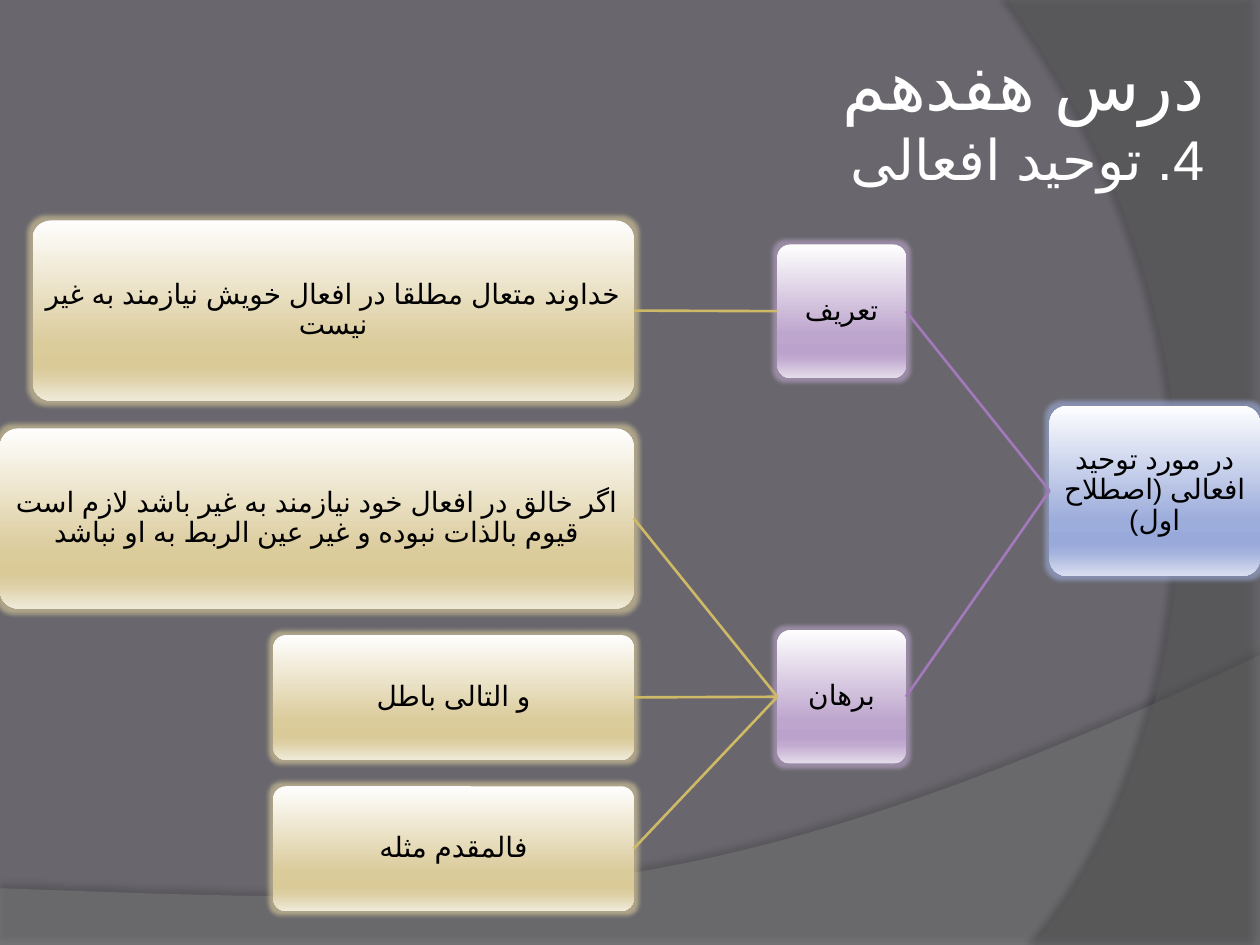
from lxml import etree
from pptx import Presentation
from pptx.dml.color import RGBColor
from pptx.enum.lang import MSO_LANGUAGE_ID
from pptx.enum.shapes import MSO_CONNECTOR, MSO_SHAPE
from pptx.enum.text import MSO_ANCHOR, PP_ALIGN
from pptx.oxml.ns import qn
from pptx.util import Inches, Pt

ROUNDED = MSO_SHAPE.ROUNDED_RECTANGLE
STRAIGHT = MSO_CONNECTOR.STRAIGHT
MIDDLE = MSO_ANCHOR.MIDDLE
CENTER, RIGHT = PP_ALIGN.CENTER, PP_ALIGN.RIGHT
PERSIAN = MSO_LANGUAGE_ID.FARSI
LEFT_SIDE, RIGHT_SIDE = 1, 3
CURVE_STEPS = 40
SCRIPT_FONT = "Arial"

COLORS = {
    "background": "69676D",
    "title": "FFFFFF",
    "text": "000000",
    "shadow": "000000",
    "hill": "7F7F7F",
    "arc": "5E5E5E",
    "purple_line": "A379BB",
    "gold_line": "CEB966",
}
STOP_POSITIONS = (0, 68, 81, 86, 100)
GRADIENTS = {
    "blue": ("FEFEFF", "9CACDB", "98A9DA", "A3B1DD", "D9DEF0"),
    "purple": ("FEFEFE", "BDA5CD", "BBA2CC", "C2ABD0", "E4DCEA"),
    "gold": ("FFFEFE", "DBCC9C", "D9CA98", "DDCFA3", "EFEAD9"),
}
BOX_FRAME = {
    "word_wrap": True,
    "vertical_anchor": MIDDLE,
    "margin_left": Inches(0.05),
    "margin_right": Inches(0.05),
    "margin_top": Inches(0.05),
    "margin_bottom": Inches(0.05),
}

TOPIC = ("در مورد توحید افعالی (اصطلاح اول)", (8.33, 3.22, 1.67, 1.35))
BRANCHES = [
    ("تعریف", (6.17, 1.94, 1.02, 1.06), [
        ("خداوند متعال مطلقا در افعال خویش نیازمند به غیر نیست", (0.26, 1.75, 4.77, 1.43)),
    ]),
    ("برهان", (6.17, 5, 1.02, 1.06), [
        ("اگر خالق در افعال خود نیازمند به غیر باشد لازم است قیوم بالذات نبوده"
         " و غیر عین الربط به او نباشد", (0, 3.4, 5.03, 1.43)),
        ("و التالی باطل", (2.17, 5.04, 2.86, 0.99)),
        ("فالمقدم مثله", (2.17, 6.24, 2.86, 0.99)),
    ]),
]


def set_attributes(target, values):
    """Set every named value on the target."""
    for name, value in values.items():
        setattr(target, name, value)


def add_color(parent, color, opacity=100):
    """Append an RGB colour with an opacity in percent."""
    element = etree.SubElement(parent, qn("a:srgbClr"), val=color)
    if opacity < 100:
        etree.SubElement(element, qn("a:alpha"), val=str(opacity * 1000))


def add_effect(shape, tag, color, opacity, **attributes):
    """Give a shape a single effect in place of the theme shadow."""
    shape.shadow.inherit = False
    effects = shape._element.spPr.find(qn("a:effectLst"))
    values = {name: str(value) for name, value in attributes.items()}
    add_color(etree.SubElement(effects, qn(tag), values), color, opacity)


def fill_gradient(shape, colors):
    """Fill a shape with a gradient that runs from top to bottom."""
    shape.fill.gradient()
    shape.fill.gradient_angle = 270
    stops = next(shape._element.spPr.iter(qn("a:gsLst")))
    for stop in list(stops):
        stops.remove(stop)
    for position, color in zip(STOP_POSITIONS, colors):
        add_color(etree.SubElement(stops, qn("a:gs"), pos=str(position * 1000)), color)


def add_run(paragraph, text, size, font, color):
    """Add formatted Persian text to a paragraph."""
    run = paragraph.add_run()
    run.text = text
    set_attributes(run.font, {"size": Pt(size), "name": font, "language_id": PERSIAN})
    run.font.color.rgb = RGBColor.from_string(color)
    etree.SubElement(run._r.get_or_add_rPr(), qn("a:cs"), typeface=SCRIPT_FONT)


def format_paragraph(paragraph, **values):
    """Make a paragraph run from right to left and set its format."""
    set_attributes(paragraph, values)
    paragraph._p.get_or_add_pPr().set("rtl", "1")


def curve_points(start, first, second, end):
    """Return points along a cubic curve, without its start."""
    points = []
    for step in range(1, CURVE_STEPS + 1):
        t = step / CURVE_STEPS
        weights = ((1 - t) ** 3, 3 * t * (1 - t) ** 2, 3 * t ** 2 * (1 - t), t ** 3)
        points.append(tuple(
            sum(weight * value for weight, value in zip(weights, axis))
            for axis in zip(start, first, second, end)))
    return points


def add_backdrop(slide, points, color, opacity, shadow):
    """Draw a translucent background outline with a soft shadow."""
    corners = [(Inches(x), Inches(y)) for x, y in points]
    builder = slide.shapes.build_freeform(*corners[0], scale=1.0)
    builder.add_line_segments(corners[1:], close=True)
    shape = builder.convert_to_shape()
    shape.fill.solid()
    shape.fill.fore_color.rgb = RGBColor.from_string(color)
    fill_color = next(shape._element.spPr.iter(qn("a:srgbClr")))
    etree.SubElement(fill_color, qn("a:alpha"), val=str(opacity * 1000))
    shape.line.fill.background()
    shadow_opacity, blur, distance, direction = shadow
    add_effect(shape, "a:outerShdw", COLORS["shadow"], shadow_opacity,
               blurRad=Pt(blur), dist=Pt(distance), dir=direction * 60000,
               algn="ctr", rotWithShape=0)


def add_title(slide, heading, subheading):
    """Add the two-line title."""
    box = slide.shapes.add_textbox(Inches(1.44), Inches(0.3), Inches(8.17), Inches(1.25))
    set_attributes(box.text_frame, BOX_FRAME)
    paragraph = box.text_frame.paragraphs[0]
    format_paragraph(paragraph, alignment=RIGHT)
    add_run(paragraph, heading, 40, "Cabin", COLORS["title"])
    paragraph.add_line_break()
    add_run(paragraph, subheading, 32, "Cabin", COLORS["title"])


def add_box(slide, text, bounds, palette):
    """Add a glowing rounded box with centred text."""
    shape = slide.shapes.add_shape(ROUNDED, *(Inches(value) for value in bounds))
    shape.adjustments[0] = 0.1
    fill_gradient(shape, GRADIENTS[palette])
    shape.line.fill.background()
    add_effect(shape, "a:glow", GRADIENTS[palette][1], 60, rad=Pt(5))
    set_attributes(shape.text_frame, BOX_FRAME)
    paragraph = shape.text_frame.paragraphs[0]
    format_paragraph(paragraph, alignment=CENTER, line_spacing=0.9)
    add_run(paragraph, text, 16, "Arial", COLORS["text"])
    return shape


def join_boxes(slide, parent, child, color):
    """Connect the left side of a parent to the right side of its child."""
    connector = slide.shapes.add_connector(STRAIGHT, 0, 0, 0, 0)
    connector.begin_connect(parent, LEFT_SIDE)
    connector.end_connect(child, RIGHT_SIDE)
    connector.line.width = Pt(1.5)
    connector.line.color.rgb = RGBColor.from_string(color)
    etree.SubElement(connector._element.spPr, qn("a:effectLst"))


def main():
    """Build the slide and save it."""
    presentation = Presentation()
    set_attributes(presentation, {"slide_width": Inches(10), "slide_height": Inches(7.5)})
    slide = presentation.slides.add_slide(presentation.slide_layouts[6])
    slide.background.fill.solid()
    slide.background.fill.fore_color.rgb = RGBColor.from_string(COLORS["background"])

    hill = curve_points((10, 5.2), (5.59, 7.29), (3.91, 7.19), (0, 7.05))
    add_backdrop(slide, [(0, 7.5), (10, 7.5), (10, 5.2)] + hill,
                 COLORS["hill"], 45, (35, 4, 3.5, 270))
    arc = curve_points((8.21, 7.5), (9.35, 6.19), (10.18, 3), (8, 0))
    add_backdrop(slide, [(10, 0), (10, 7.5), (8.21, 7.5)] + arc,
                 COLORS["arc"], 40, (45, 4, 4, 180))

    add_title(slide, "درس هفدهم", "4. توحید افعالی")
    topic = add_box(slide, *TOPIC, "blue")
    for text, bounds, details in BRANCHES:
        branch = add_box(slide, text, bounds, "purple")
        join_boxes(slide, topic, branch, COLORS["purple_line"])
        for detail in details:
            join_boxes(slide, branch, add_box(slide, *detail, "gold"), COLORS["gold_line"])
    presentation.save("out.pptx")


if __name__ == "__main__":
    main()
